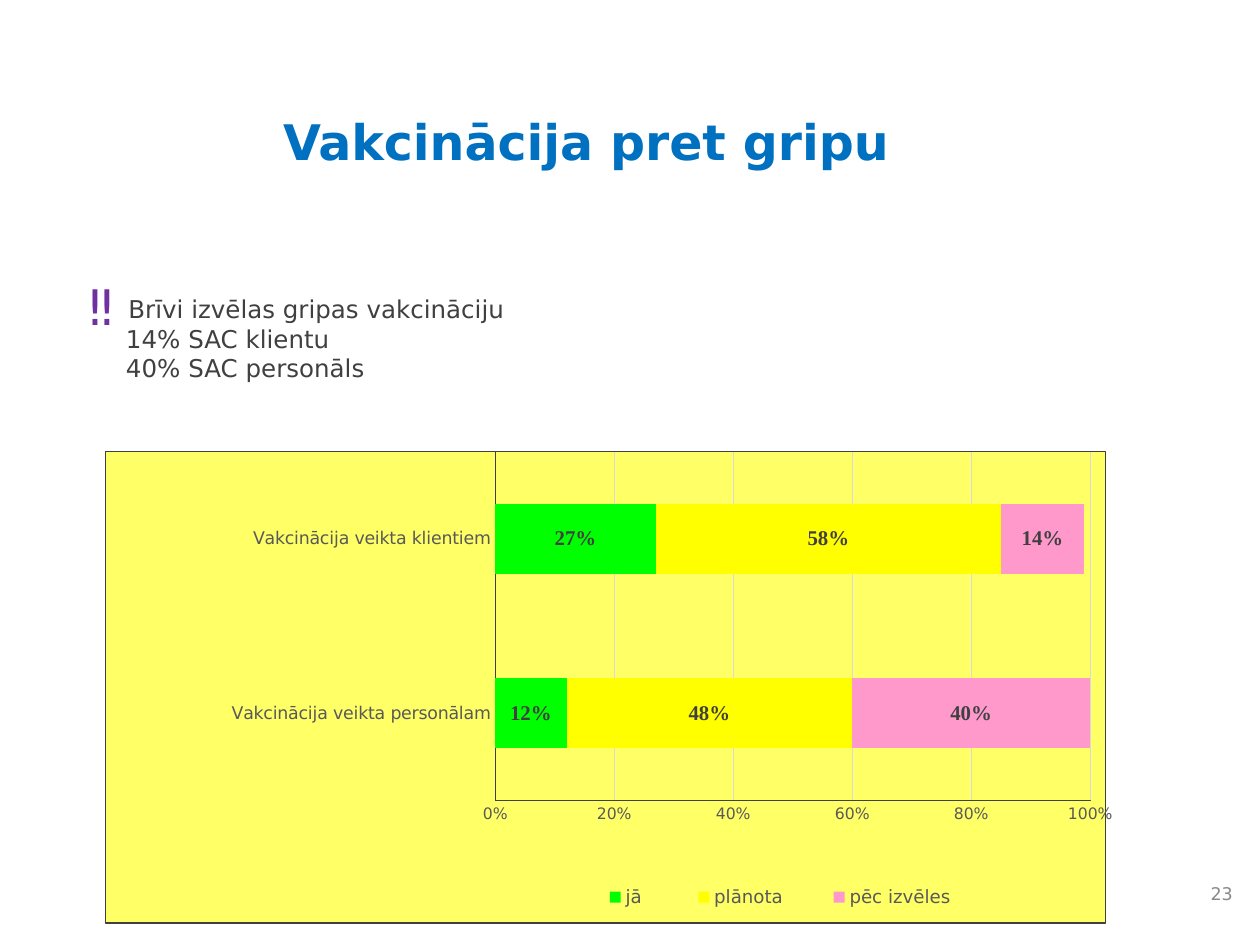
import dataclasses
import typing

import lxml.etree
import pptx
import pptx.chart.data
import pptx.dml.color
import pptx.enum.chart
import pptx.enum.text
import pptx.oxml
import pptx.oxml.ns
import pptx.util

Cm = pptx.util.Cm
Pt = pptx.util.Pt
RGBColor = pptx.dml.color.RGBColor
Align = pptx.enum.text.PP_ALIGN
Anchor = pptx.enum.text.MSO_ANCHOR
ChartEnum = pptx.enum.chart
qn = pptx.oxml.ns.qn


@dataclasses.dataclass(frozen=True)
class Theme:
    sans: str = "DejaVu Sans"
    serif: str = "Times New Roman"
    title: str = "0070C0"
    ink: str = "404040"
    axis: str = "595959"
    number: str = "898989"
    bullet: str = "7030A0"
    grid: str = "D9D9D9"
    panel: str = "FFFF66"
    title_size: float = 28
    body_size: float = 14
    label_size: float = 12
    legend_size: float = 10.5
    small_size: float = 10
    scale_size: float = 9
    line_width: float = 0.75


THEME = Theme()


class Box(typing.NamedTuple):
    left: float
    top: float
    width: float
    height: float

    def lengths(self) -> list[int]:
        return [Cm(value) for value in self]


@dataclasses.dataclass(frozen=True)
class Line:
    text: str
    indent: float = 0
    first: float = 0
    bullet: str = ""


@dataclasses.dataclass(frozen=True)
class TextBlock:
    box: Box
    lines: list[Line]
    size: float
    color: str
    bold: bool = False
    align: Align = Align.LEFT
    anchor: Anchor = Anchor.TOP
    margin_top: float = 0.13


@dataclasses.dataclass(frozen=True)
class Answer:
    name: str
    values: tuple[float, float]
    color: str


TEXTS = [
    TextBlock(Box(23.7, 17.58, 1.4, 0.84), [Line("23")], THEME.small_size, THEME.number,
              align=Align.RIGHT, anchor=Anchor.MIDDLE),
    TextBlock(Box(5.46, 2.11, 18.95, 1.45), [Line("Vakcinācija pret gripu")],
              THEME.title_size, THEME.title, bold=True),
    TextBlock(Box(1.55, 5.21, 22.5, 2.64),
              [Line("Brīvi izvēlas gripas vakcināciju", 0.79, -0.79, "‼"),
               Line("14% SAC klientu", 0.79, -0.05),
               Line("40% SAC personāls", 0.79, -0.05)],
              THEME.body_size, THEME.ink, margin_top=0.72),
]
CATEGORIES = ["Vakcinācija veikta personālam", "Vakcinācija veikta klientiem"]
ANSWERS = [
    Answer("jā ", (0.12, 0.27), "00FF00"),
    Answer("plānota", (0.48, 0.58), "FFFF00"),
    Answer("pēc izvēles", (0.4, 0.14), "FF99CC"),
]
CHART_BOX = Box(2.11, 9.09, 20.32, 9.53)
PLOT_LAYOUT = Box(0.39, 0, 0.595, 0.74)
LEGEND_LAYOUT = Box(0.46, 0.9, 0.43, 0.09)


def set_values(target: typing.Any, values: dict[str, typing.Any]) -> None:
    for name, value in values.items():
        setattr(target, name, value)


def set_font(font: typing.Any, size: float, color: str, name: str = THEME.sans,
             bold: bool = False) -> None:
    set_values(font, {"size": Pt(size), "name": name, "bold": bold})
    font.color.rgb = RGBColor.from_string(color)


def set_line(line: typing.Any, color: str) -> None:
    line.color.rgb = RGBColor.from_string(color)
    line.width = Pt(THEME.line_width)


def add_bullet(properties: typing.Any, character: str) -> None:
    color = lxml.etree.SubElement(properties, qn("a:buClr"))
    lxml.etree.SubElement(color, qn("a:srgbClr"), val=THEME.bullet)
    lxml.etree.SubElement(properties, qn("a:buSzPct"), val="200000")
    lxml.etree.SubElement(properties, qn("a:buFont"), typeface=THEME.sans)
    lxml.etree.SubElement(properties, qn("a:buChar"), char=character)


def add_text(slide: typing.Any, block: TextBlock) -> None:
    frame = slide.shapes.add_textbox(*block.box.lengths()).text_frame
    set_values(frame, {"word_wrap": True, "vertical_anchor": block.anchor,
                       "margin_top": Cm(block.margin_top)})
    for index, line in enumerate(block.lines):
        paragraph = frame.add_paragraph() if index else frame.paragraphs[0]
        paragraph.alignment = block.align
        properties = paragraph._p.get_or_add_pPr()
        if line.indent:
            properties.set("marL", str(Cm(line.indent)))
            properties.set("indent", str(Cm(line.first)))
        if line.bullet:
            add_bullet(properties, line.bullet)
        run = paragraph.add_run()
        run.text = line.text
        set_font(run.font, block.size, block.color, bold=block.bold)


def set_layout(parent: typing.Any, position: int, layout: Box, inner: bool = False) -> None:
    for previous in parent.findall(qn("c:layout")):
        parent.remove(previous)
    element = lxml.etree.Element(qn("c:layout"))
    manual = lxml.etree.SubElement(element, qn("c:manualLayout"))
    entries = {"layoutTarget": "inner"} if inner else {}
    entries |= {"xMode": "edge", "yMode": "edge"}
    entries |= dict(zip("xywh", layout))
    for name, value in entries.items():
        lxml.etree.SubElement(manual, qn(f"c:{name}"), val=str(value))
    parent.insert(position, element)


def area_format(fill: str) -> typing.Any:
    return pptx.oxml.parse_xml(
        f'<c:spPr {pptx.oxml.ns.nsdecls("c", "a")}>{fill}'
        f'<a:ln w="{Pt(THEME.line_width)}"><a:solidFill><a:srgbClr val="{THEME.ink}"/>'
        "</a:solidFill></a:ln></c:spPr>")


def add_answer_chart(slide: typing.Any) -> None:
    data = pptx.chart.data.CategoryChartData(number_format="0%")
    data.categories = CATEGORIES
    for answer in ANSWERS:
        data.add_series(answer.name, answer.values)
    chart = slide.shapes.add_chart(
        ChartEnum.XL_CHART_TYPE.BAR_STACKED, *CHART_BOX.lengths(), data).chart
    set_values(chart, {"has_title": False, "has_legend": True})
    set_font(chart.font, THEME.small_size, "000000", THEME.serif)

    plot = chart.plots[0]
    set_values(plot, {"gap_width": 150, "overlap": 100, "vary_by_categories": False})
    for series, answer in zip(plot.series, ANSWERS):
        series.format.fill.solid()
        series.format.fill.fore_color.rgb = RGBColor.from_string(answer.color)
        labels = series.data_labels
        set_values(labels, {"show_value": True, "number_format": "0%",
                            "number_format_is_linked": False})
        set_font(labels.font, THEME.label_size, THEME.ink, THEME.serif, True)

    for axis, size in ((chart.category_axis, THEME.small_size),
                       (chart.value_axis, THEME.scale_size)):
        set_values(axis, {"major_tick_mark": ChartEnum.XL_TICK_MARK.NONE,
                          "minor_tick_mark": ChartEnum.XL_TICK_MARK.NONE})
        set_font(axis.tick_labels.font, size, THEME.axis)
        set_line(axis.format.line, THEME.ink)
    scale = chart.value_axis
    set_values(scale, {"minimum_scale": 0, "maximum_scale": 1, "major_unit": 0.2,
                       "has_major_gridlines": True})
    set_values(scale.tick_labels, {"number_format": "0%", "number_format_is_linked": False})
    set_line(scale.major_gridlines.format.line, THEME.grid)

    legend = chart.legend
    set_values(legend, {"position": ChartEnum.XL_LEGEND_POSITION.BOTTOM,
                        "include_in_layout": False})
    set_font(legend.font, THEME.legend_size, THEME.axis)
    set_layout(legend._element, 1, LEGEND_LAYOUT)

    space = chart._chartSpace
    plot_area = space.chart.plotArea
    set_layout(plot_area, 0, PLOT_LAYOUT, inner=True)
    plot_area.append(area_format("<a:noFill/>"))
    space.find(qn("c:txPr")).addprevious(area_format(
        f'<a:solidFill><a:srgbClr val="{THEME.panel}"/></a:solidFill>'))


def main() -> None:
    presentation = pptx.Presentation()
    set_values(presentation, {"slide_width": Cm(25.4), "slide_height": Cm(19.05)})
    slide = presentation.slides.add_slide(presentation.slide_layouts[6])
    for block in TEXTS:
        add_text(slide, block)
    add_answer_chart(slide)
    presentation.save("out.pptx")


if __name__ == "__main__":
    main()
